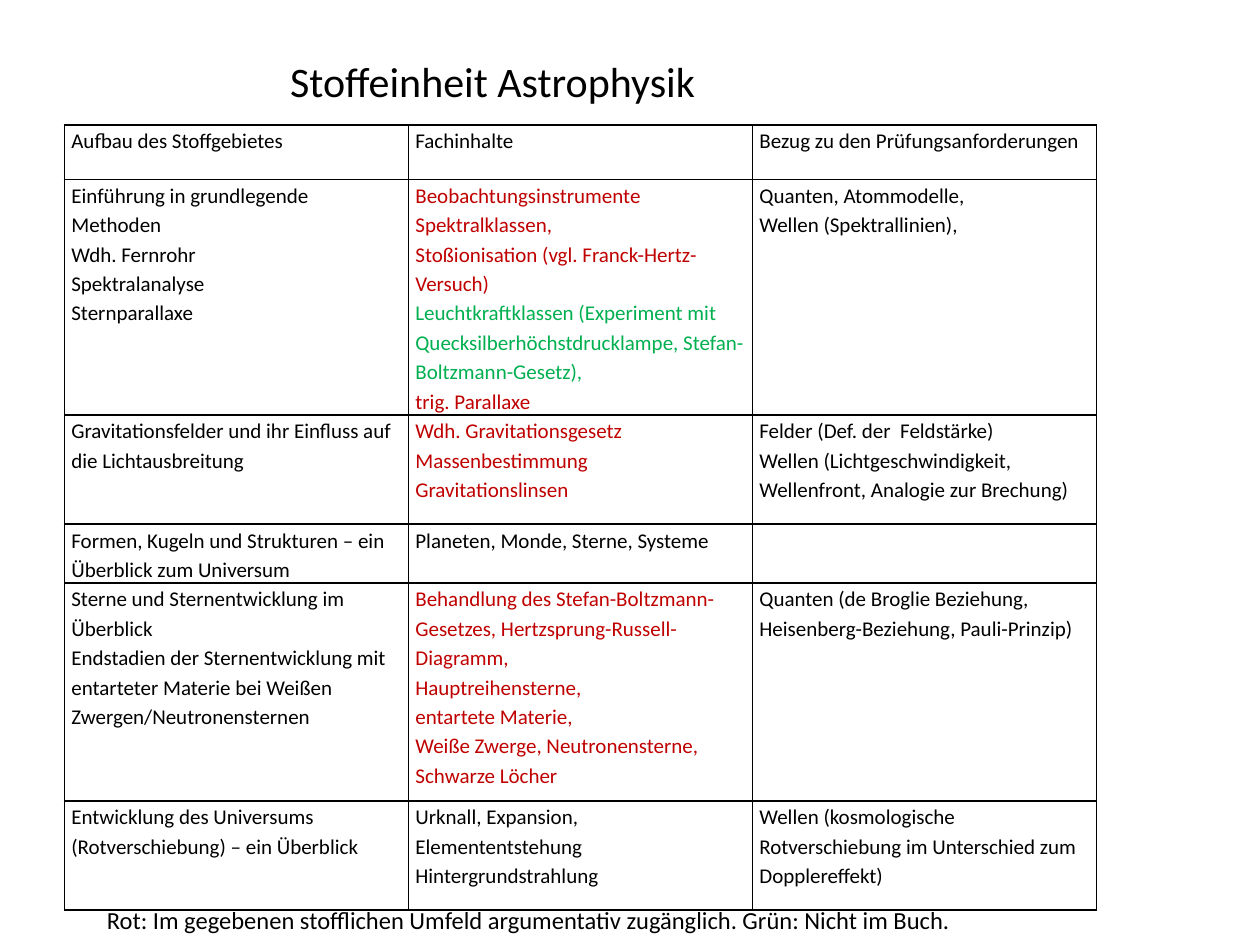
from dataclasses import dataclass

from lxml import etree
from pptx import Presentation
from pptx.dml.color import RGBColor
from pptx.enum.text import MSO_ANCHOR, MSO_AUTO_SIZE, PP_ALIGN
from pptx.oxml.ns import qn
from pptx.util import Pt

BLACK = RGBColor(0x00, 0x00, 0x00)
RED = RGBColor(0xC0, 0x00, 0x00)
GREEN = RGBColor(0x00, 0xB0, 0x50)
LEFT = PP_ALIGN.LEFT
CENTER = PP_ALIGN.CENTER
MIDDLE = MSO_ANCHOR.MIDDLE
GROW = MSO_AUTO_SIZE.SHAPE_TO_FIT_TEXT
FONT = "Calibri"


@dataclass
class Line:
    text: str
    color: RGBColor = BLACK


@dataclass
class Row:
    height: float
    cells: tuple[list[Line], list[Line], list[Line]]


def lines(*texts: str, color: RGBColor = BLACK) -> list[Line]:
    return [Line(text, color) for text in texts]


# Row heights leave room for every wrapped line
ROWS = [
    Row(31.2, (
        lines("Aufbau des Stoffgebietes"),
        lines("Fachinhalte"),
        lines("Bezug zu den Prüfungsanforderungen"),
    )),
    Row(134.6, (
        lines("Einführung in grundlegende Methoden", "Wdh. Fernrohr",
              "Spektralanalyse", "Sternparallaxe"),
        lines("Beobachtungsinstrumente", "Spektralklassen,",
              "Stoßionisation (vgl. Franck-Hertz-Versuch)", color=RED)
        + lines("Leuchtkraftklassen (Experiment mit "
                "Quecksilberhöchstdrucklampe, Stefan-Boltzmann-Gesetz),",
                color=GREEN)
        + lines("trig. Parallaxe", color=RED),
        lines("Quanten, Atommodelle,", "Wellen (Spektrallinien),"),
    )),
    Row(62.4, (
        lines("Gravitationsfelder und ihr Einfluss auf die Lichtausbreitung"),
        lines("Wdh. Gravitationsgesetz", "Massenbestimmung",
              "Gravitationslinsen", color=RED),
        lines("Felder (Def. der  Feldstärke)",
              "Wellen (Lichtgeschwindigkeit, Wellenfront, "
              "Analogie zur Brechung)"),
    )),
    Row(33.6, (
        lines("Formen, Kugeln und Strukturen – ein Überblick zum Universum"),
        lines("Planeten, Monde, Sterne, Systeme"),
        [],
    )),
    Row(124.6, (
        lines("Sterne und Sternentwicklung im Überblick",
              "Endstadien der Sternentwicklung mit entarteter Materie "
              "bei Weißen Zwergen/Neutronensternen"),
        lines("Behandlung des Stefan-Boltzmann-Gesetzes, "
              "Hertzsprung-Russell-Diagramm,",
              "Hauptreihensterne,", "entartete Materie,",
              "Weiße Zwerge, Neutronensterne,", "Schwarze Löcher", color=RED),
        lines("Quanten (de Broglie Beziehung, Heisenberg-Beziehung, "
              "Pauli-Prinzip)"),
    )),
    Row(62.4, (
        lines("Entwicklung des Universums",
              "(Rotverschiebung) – ein Überblick"),
        lines("Urknall, Expansion, Elemententstehung Hintergrundstrahlung"),
        lines("Wellen (kosmologische Rotverschiebung im Unterschied "
              "zum Dopplereffekt)"),
    )),
]


def write(frame, items: list[Line], *, size: float = 12,
          align: PP_ALIGN = LEFT, spacing: float = 1.0) -> None:
    for i, item in enumerate(items):
        para = frame.add_paragraph() if i else frame.paragraphs[0]
        para.alignment = align
        para.line_spacing = spacing
        run = para.add_run()
        run.text = item.text
        run.font.name = FONT
        run.font.size = Pt(size)
        run.font.color.rgb = item.color


def add_box(slide, left: float, top: float, width: float, height: float):
    box = slide.shapes.add_textbox(Pt(left), Pt(top), Pt(width), Pt(height))
    frame = box.text_frame
    frame.vertical_anchor = MIDDLE
    return frame


def add_edges(cell) -> None:
    props = cell._tc.get_or_add_tcPr()
    for i, side in enumerate(("a:lnL", "a:lnR", "a:lnT", "a:lnB")):
        edge = etree.Element(qn(side), w=str(Pt(1)))
        fill = etree.SubElement(edge, qn("a:solidFill"))
        etree.SubElement(fill, qn("a:srgbClr"), val=str(BLACK))
        props.insert(i, edge)


def add_grid(slide, rows: list[Row], left: float, top: float,
             width: float) -> None:
    cols = len(rows[0].cells)
    high = sum(row.height for row in rows)
    table = slide.shapes.add_table(len(rows), cols, Pt(left), Pt(top),
                                   Pt(width), Pt(high)).table
    table.first_row = False
    table.horz_banding = False
    for col in table.columns:
        col.width = Pt(width / cols)
    for r, row in enumerate(rows):
        table.rows[r].height = Pt(row.height)
        for c, items in enumerate(row.cells):
            cell = table.cell(r, c)
            cell.margin_left = cell.margin_right = Pt(4)
            cell.margin_top = cell.margin_bottom = Pt(0)
            cell.fill.background()
            add_edges(cell)
            write(cell.text_frame, items, spacing=1.15)


def main() -> None:
    deck = Presentation()
    deck.slide_width, deck.slide_height = Pt(720), Pt(540)
    slide = deck.slides.add_slide(deck.slide_layouts[6])

    # Title
    title = add_box(slide, -42.5, 15.1, 648, 62.6)
    title.word_wrap = True
    write(title, lines("Stoffeinheit Astrophysik"), size=24, align=CENTER)

    # Topic table
    add_grid(slide, ROWS, 36.8, 71.4, 589.8)

    # Colour key
    key = add_box(slide, 54, 513.2, 497.5, 24.2)
    key.word_wrap = False
    key.auto_size = GROW
    write(key, lines("Rot: Im gegebenen stofflichen Umfeld argumentativ "
                     "zugänglich. Grün: Nicht im Buch."), size=14)

    deck.save("out.pptx")


if __name__ == "__main__":
    main()
